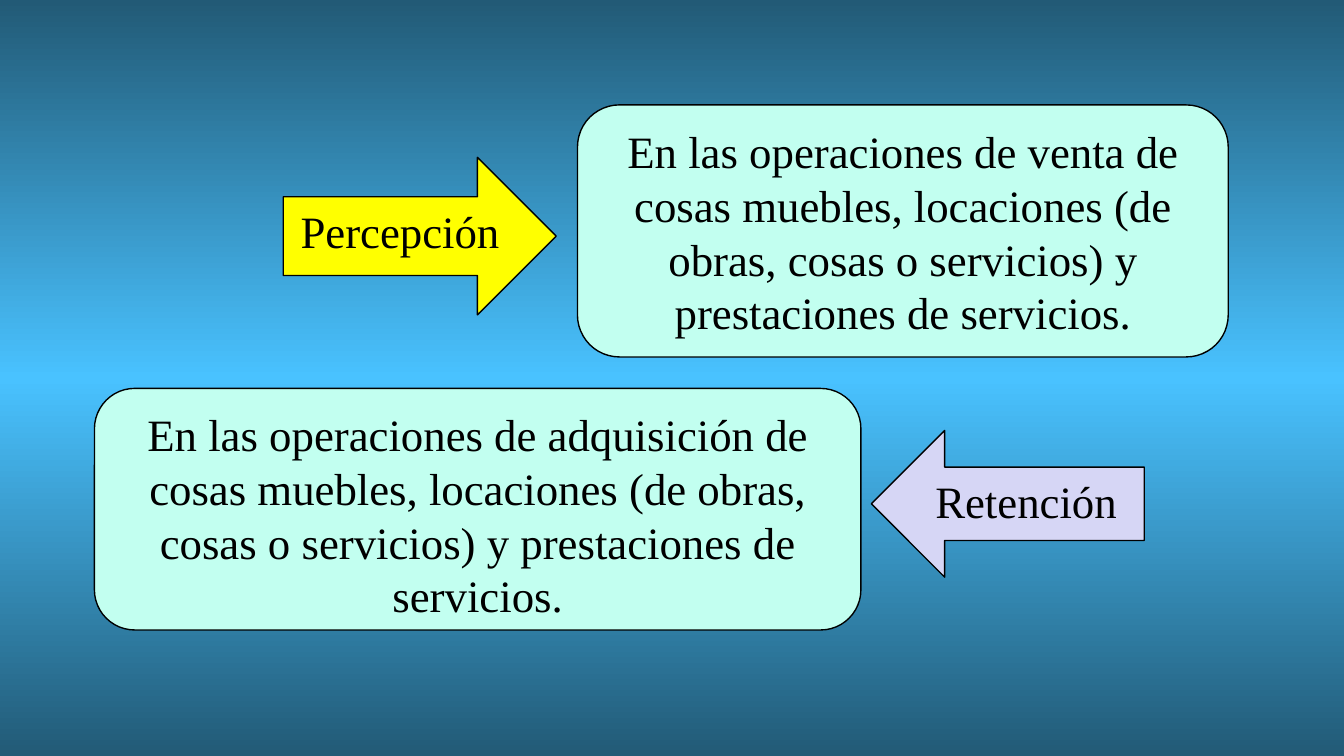
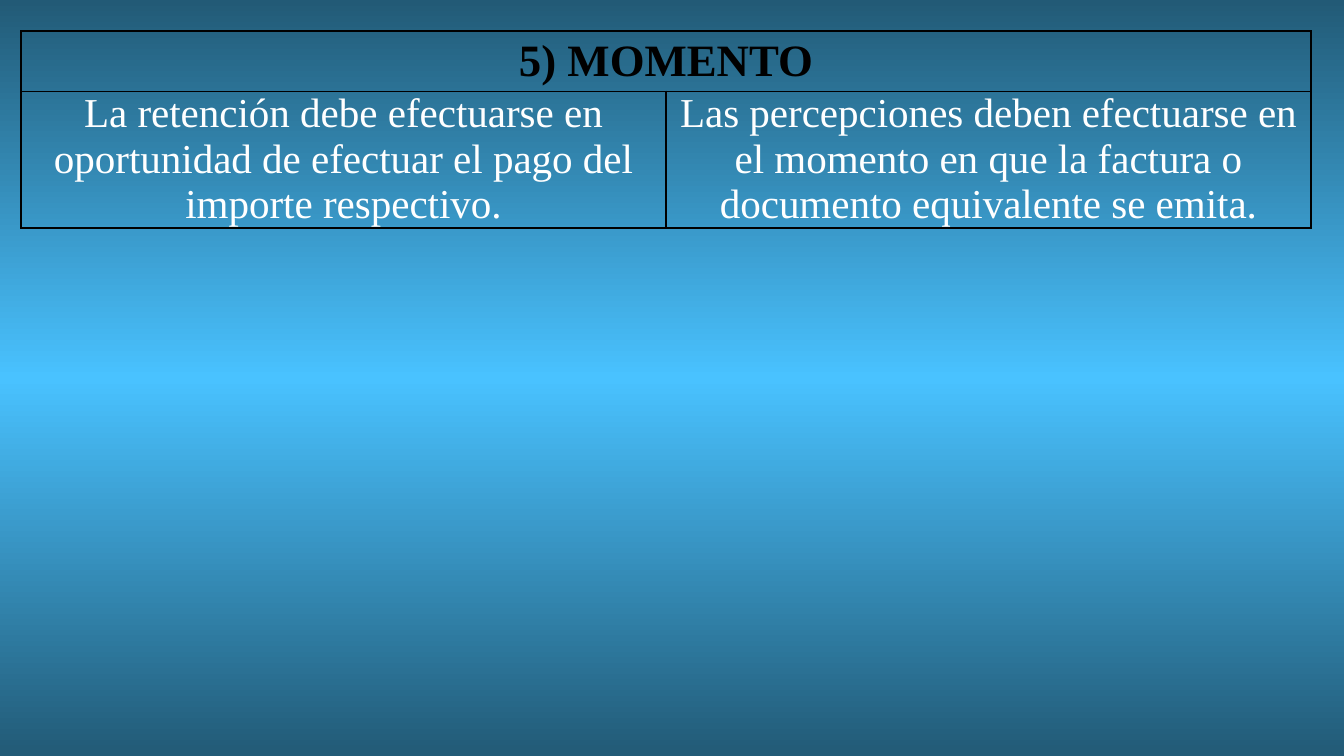
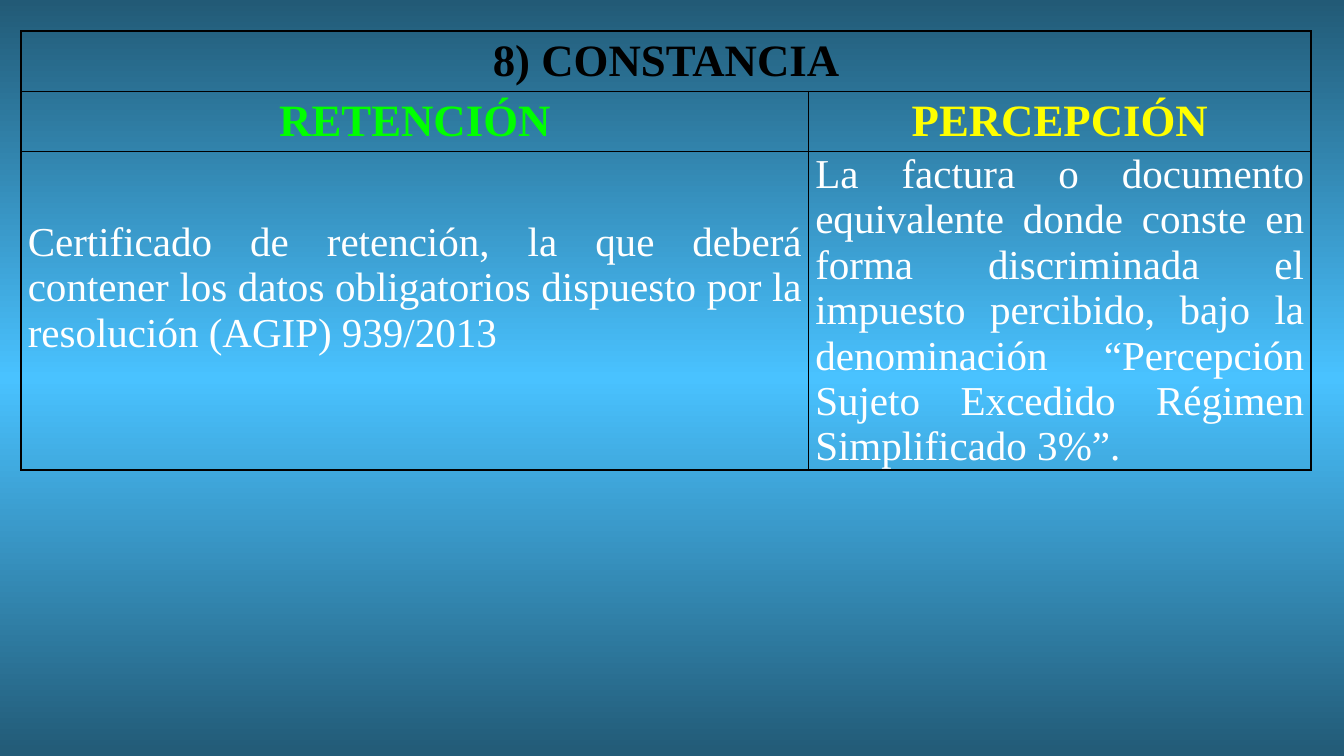
import copy

import pptx
import pptx.dml.color
import pptx.enum.shapes
import pptx.enum.text
import pptx.oxml
import pptx.oxml.ns
import pptx.util

Pt = pptx.util.Pt
RGBColor = pptx.dml.color.RGBColor
SHAPE = pptx.enum.shapes.MSO_SHAPE
ALIGN = pptx.enum.text.PP_ALIGN
ANCHOR = pptx.enum.text.MSO_ANCHOR

DEEP_BLUE = RGBColor(0x22, 0x5A, 0x76)
SKY_BLUE = RGBColor(0x49, 0xC2, 0xFF)
BLACK = RGBColor(0, 0, 0)
WHITE = RGBColor(0xFF, 0xFF, 0xFF)
YELLOW = RGBColor(0xFF, 0xFF, 0)
GREEN = RGBColor(0, 0xFF, 0)
MINT = RGBColor(0xC2, 0xFF, 0xF0)
LAVENDER = RGBColor(0xD6, 0xD6, 0xF5)

FONT = "Times New Roman"
ARROW_WIDTH = 146.2
TABLE_BOX = (11.3, 16.7, 691)
HEADING_HEIGHT = 32.1
HEADING_MARGINS = {"margin_left": Pt(7.2), "margin_right": Pt(7.2),
                   "margin_top": Pt(2.88), "margin_bottom": Pt(2.88)}
BODY_MARGINS = {"margin_left": Pt(3.6), "margin_right": Pt(3.6),
                "margin_top": 0, "margin_bottom": 0}


def apply(target, formats):
    for attribute, value in formats.items():
        setattr(target, attribute, value)


def write(frame, text, size, color, align=ALIGN.CENTER, bold=False):
    paragraph = frame.paragraphs[0]
    paragraph.alignment = align
    run = paragraph.add_run()
    run.text = text
    apply(run.font, {"name": FONT, "size": Pt(size), "bold": bold})
    run.font.color.rgb = color


def paint_background(master):
    fill = master.background.fill
    fill.gradient()
    fill.gradient_angle = 90
    stops = master.element.find(".//" + pptx.oxml.ns.qn("a:gsLst"))
    stops.append(copy.deepcopy(stops[-1]))
    bands = ((0, DEEP_BLUE), (0.5, SKY_BLUE), (1, DEEP_BLUE))
    for stop, (position, color) in zip(fill.gradient_stops, bands):
        stop.position = position
        stop.color.rgb = color


def add_block(slide, preset, box, text, color):
    block = slide.shapes.add_shape(preset, *map(Pt, box))
    block.shadow.inherit = False
    block.fill.solid()
    block.fill.fore_color.rgb = color
    block.line.color.rgb = BLACK
    block.line.width = Pt(0.75)
    apply(block.text_frame, {"word_wrap": True, "vertical_anchor": ANCHOR.TOP})
    write(block.text_frame, text, 24, BLACK)


def add_operation(slide, box, scope, regime, arrow, color, arrow_top, arrow_height):
    left, top, width, height = box
    if arrow == SHAPE.RIGHT_ARROW:
        arrow_left = left - 11.4 - ARROW_WIDTH
    else:
        arrow_left = left + width + 5.6
    add_block(slide, SHAPE.ROUNDED_RECTANGLE, box, scope, MINT)
    add_block(slide, arrow, (arrow_left, top + arrow_top, ARROW_WIDTH, arrow_height),
              regime, color)


def heading(text, color=BLACK):
    return {"text": text, "size": 24, "color": color, "bold": True}


def body(text, align):
    return {"text": text, "size": 22, "color": WHITE, "align": align}


def outline(cell):
    properties = cell._tc.get_or_add_tcPr()
    for side in ("lnL", "lnR", "lnT", "lnB"):
        properties.append(pptx.oxml.parse_xml(
            f'<a:{side} {pptx.oxml.ns.nsdecls("a")} w="12700"><a:solidFill>'
            f'<a:srgbClr val="{BLACK}"/></a:solidFill></a:{side}>'))


def add_regime_table(slide, box, title, rows, first_width, body_height):
    left, top, width = box
    heights = [HEADING_HEIGHT] * len(rows) + [body_height]
    table = slide.shapes.add_table(len(heights), 2, Pt(left), Pt(top),
                                   Pt(width), Pt(sum(heights))).table
    apply(table, {"first_row": False, "horz_banding": False})
    for column, column_width in zip(table.columns, (first_width, width - first_width)):
        column.width = Pt(column_width)
    for row, height in zip(table.rows, heights):
        row.height = Pt(height)
    for cell in table.iter_cells():
        outline(cell)
        cell.fill.background()
    table.cell(0, 0).merge(table.cell(0, 1))
    for row_index, entries in enumerate([[heading(title)], *rows]):
        for column_index, entry in enumerate(entries):
            cell = table.cell(row_index, column_index)
            is_heading = entry.get("bold", False)
            apply(cell, HEADING_MARGINS if is_heading else BODY_MARGINS)
            cell.vertical_anchor = ANCHOR.TOP if is_heading else ANCHOR.MIDDLE
            write(cell.text_frame, **entry)
    return table


def build_operations(slide):
    add_operation(
        slide, (309.4, 56.2, 348.6, 135),
        "En las operaciones de venta de cosas muebles, locaciones (de obras, "
        "cosas o servicios) y prestaciones de servicios.",
        "Percepción", SHAPE.RIGHT_ARROW, YELLOW, 28.1, 84.4)
    add_operation(
        slide, (50.6, 208.1, 410.6, 129.4),
        "En las operaciones de adquisición de cosas muebles, locaciones (de obras, "
        "cosas o servicios) y prestaciones de servicios.",
        "Retención", SHAPE.LEFT_ARROW, LAVENDER, 22.5, 78.6)


def build_moment(slide):
    add_regime_table(slide, TABLE_BOX, "5) MOMENTO", [[
        body("La retención debe efectuarse en oportunidad de efectuar el pago "
             "del importe respectivo.", ALIGN.CENTER),
        body("Las percepciones deben efectuarse en el momento en que la factura "
             "o documento equivalente se emita.", ALIGN.CENTER),
    ]], 345.5, 73)


def build_certificate(slide):
    table = add_regime_table(slide, TABLE_BOX, "8) CONSTANCIA", [
        [heading("RETENCIÓN", GREEN), heading("PERCEPCIÓN", YELLOW)],
        [body("Certificado de retención, la que deberá contener los datos "
              "obligatorios dispuesto por la resolución (AGIP) 939/2013", ALIGN.JUSTIFY),
         body("La factura o documento equivalente donde conste en forma "
              "discriminada el impuesto percibido, bajo la denominación “Percepción "
              "Sujeto Excedido Régimen Simplificado 3%”.", ALIGN.JUSTIFY)],
    ], 421.9, 170.2)
    table.cell(2, 0).margin_bottom = Pt(24.4)


def main():
    deck = pptx.Presentation()
    apply(deck, {"slide_width": Pt(720), "slide_height": Pt(405)})
    paint_background(deck.slide_master)
    for build in (build_operations, build_moment, build_certificate):
        build(deck.slides.add_slide(deck.slide_layouts[6]))
    deck.save("out.pptx")


if __name__ == "__main__":
    main()
